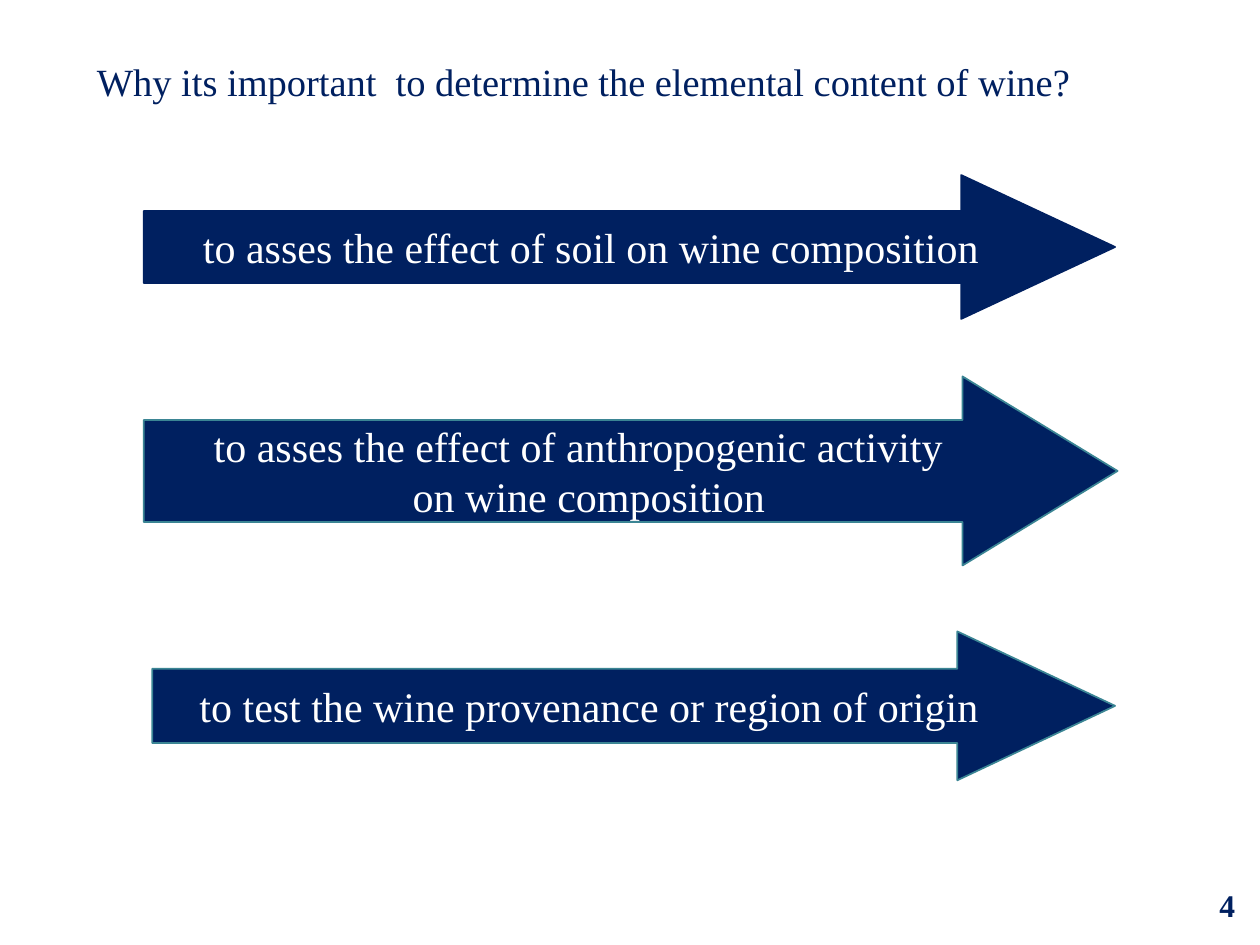
"""Builds a slide of three arrows on why the elements in wine are measured."""
import pptx
import pptx.dml.color
import pptx.enum.shapes
import pptx.enum.text
import pptx.util

Cm = pptx.util.Cm
Pt = pptx.util.Pt
RGB = pptx.dml.color.RGBColor
Align = pptx.enum.text.PP_ALIGN
Anchor = pptx.enum.text.MSO_ANCHOR
NAVY = RGB(0x00, 0x20, 0x60)
TEAL = RGB(0x3B, 0x85, 0x94)
WHITE = RGB(0xFF, 0xFF, 0xFF)


class Deck:
    """Holds the style and the current slide."""

    font = "Times New Roman"

    def __init__(self):
        """Open a deck with one title-only slide."""
        self.prs = pptx.Presentation()
        self.prs.slide_width = Cm(25.4)
        self.prs.slide_height = Cm(19.05)
        self.slide = self.prs.slides.add_slide(self.prs.slide_layouts[5])

    def put(self, frame, lines, size, color, align, bold=False):
        """Fill a text frame, one paragraph to a line."""
        for i, line in enumerate(lines):
            para = frame.add_paragraph() if i else frame.paragraphs[0]
            para.alignment = align
            run = para.add_run()
            run.text = line
            run.font.name = self.font
            run.font.size = Pt(size)
            run.font.bold = bold
            run.font.color.rgb = color

    def label(self, shape, text, size, bold=False):
        """Set one unwrapped line of navy text."""
        frame = shape.text_frame
        frame.word_wrap = False
        frame.auto_size = pptx.enum.text.MSO_AUTO_SIZE.SHAPE_TO_FIT_TEXT
        frame.vertical_anchor = Anchor.TOP
        self.put(frame, [text], size, NAVY, Align.LEFT, bold)

    def title(self, text, left, top, width, height):
        """Place and fill the title."""
        shape = self.slide.shapes.title
        shape.left, shape.top = Cm(left), Cm(top)
        shape.width, shape.height = Cm(width), Cm(height)
        self.label(shape, text, 22)

    def number(self, text, left, top, width, height):
        """Add the page number."""
        box = self.slide.shapes.add_textbox(
            Cm(left), Cm(top), Cm(width), Cm(height))
        self.label(box, text, 18, True)

    def arrow(self, lines, left, top, width, height, shaft, head, edge):
        """Add a block arrow with centred text."""
        shape = self.slide.shapes.add_shape(
            pptx.enum.shapes.MSO_SHAPE.RIGHT_ARROW,
            Cm(left), Cm(top), Cm(width), Cm(height))
        shape.shadow.inherit = False
        shape.adjustments[0] = shaft
        shape.adjustments[1] = head
        shape.fill.solid()
        shape.fill.fore_color.rgb = NAVY
        shape.line.color.rgb = edge
        shape.line.width = Pt(1)
        frame = shape.text_frame
        frame.word_wrap = True
        frame.vertical_anchor = Anchor.MIDDLE
        self.put(frame, lines, 24, WHITE, Align.CENTER)


def main():
    """Build and save the slide."""
    deck = Deck()
    deck.title("Why its important  to determine the elemental content of wine?",
               1.7, 1.04, 20.85, 1.19)
    deck.arrow(["to asses the effect of soil on wine composition"],
               2.9, 3.53, 19.58, 2.9, 0.5, 1.07, NAVY)
    deck.arrow(["to asses the effect of anthropogenic activity  ",
                "on wine composition"],
               2.9, 7.59, 19.63, 3.81, 0.54, 0.82, TEAL)
    deck.arrow(["to test the wine provenance or region of origin "],
               3.07, 12.73, 19.41, 3, 0.5, 1.06, TEAL)
    deck.number("4", 24.33, 17.73, 0.84, 1.02)
    deck.prs.save("out.pptx")


if __name__ == "__main__":
    main()
